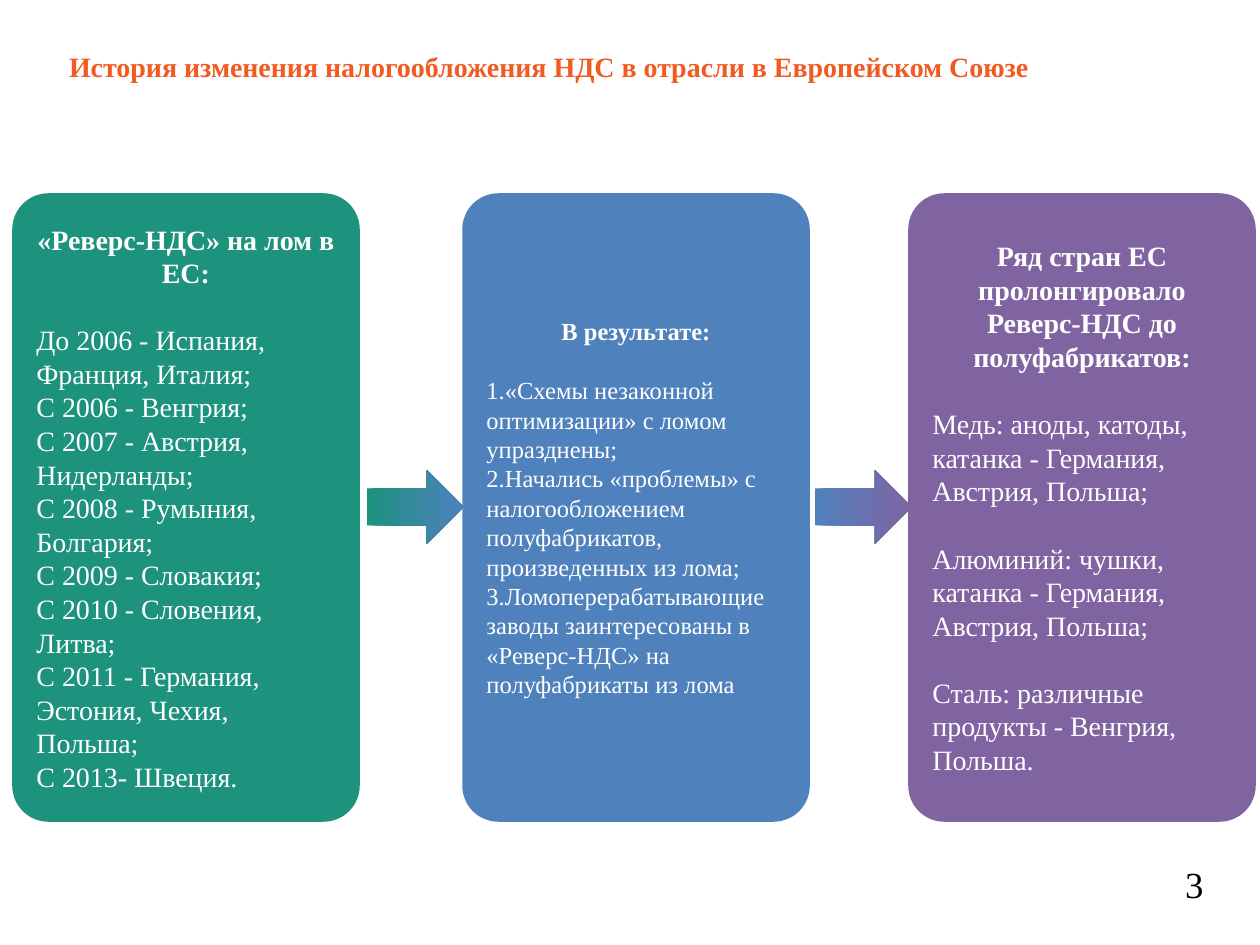
import pptx
import pptx.util
import pptx.dml.color
import pptx.enum.shapes
import pptx.enum.text

RGB = pptx.dml.color.RGBColor
SHAPE = pptx.enum.shapes.MSO_SHAPE
ANCHOR = pptx.enum.text.MSO_ANCHOR
ALIGN = pptx.enum.text.PP_ALIGN
Pt = pptx.util.Pt

PX = 914400 / 126
FONT = "Times New Roman"
ORANGE = RGB(0xF1, 0x5A, 0x21)
GREEN = RGB(0x1D, 0x92, 0x7D)
BLUE = RGB(0x4F, 0x81, 0xBD)
PURPLE = RGB(0x80, 0x64, 0xA2)
WHITE = RGB(0xFF, 0xFF, 0xFF)
BLACK = RGB(0x00, 0x00, 0x00)

CARD_TOP, CARD_W, CARD_H = 195, 344, 625
ARROW_W, ARROW_H = 97, 74
ARROW_TOP = CARD_TOP + (CARD_H - ARROW_H) // 2

CARDS = [
    (14, GREEN, 16, "«Реверс-НДС» на лом в ЕС:", [[
        "До 2006 - Испания, Франция, Италия;",
        "С 2006 - Венгрия;",
        "С 2007 - Австрия, Нидерланды;",
        "С 2008 - Румыния, Болгария;",
        "С 2009 - Словакия;",
        "С 2010 - Словения, Литва;",
        "С 2011 - Германия, Эстония, Чехия, Польша;",
        "С 2013- Швеция.",
    ]]),
    (464, BLUE, 14, "В результате:", [[
        "1.«Схемы незаконной оптимизации» с ломом упразднены;",
        "2.Начались «проблемы» с налогообложением полуфабрикатов, "
        "произведенных из лома;",
        "3.Ломоперерабатывающие заводы заинтересованы в «Реверс-НДС» "
        "на полуфабрикаты из лома",
    ]]),
    (910, PURPLE, 16, "Ряд стран ЕС пролонгировало Реверс-НДС до полуфабрикатов:", [
        ["Медь: аноды, катоды, катанка - Германия, Австрия, Польша;"],
        ["Алюминий: чушки, катанка - Германия, Австрия, Польша;"],
        ["Сталь: различные продукты - Венгрия, Польша."],
    ]),
]
ARROWS = [(367, GREEN, BLUE), (815, BLUE, PURPLE)]


def px(*lengths):
    return [round(n * PX) for n in lengths]


def add_text(tf, text, size=16, color=WHITE, bold=False, align=ALIGN.LEFT, before=0):
    p = tf.paragraphs[0]
    if p.runs:
        p = tf.add_paragraph()
    p.alignment = align
    if before:
        p.space_before = Pt(before)
    r = p.add_run()
    r.text = text
    r.font.name = FONT
    r.font.size = Pt(size)
    r.font.bold = bold
    r.font.color.rgb = color


class SlideBuilder:
    def __init__(self, slide):
        self.s = slide

    def label(self, x, y, w, h, text, wrap=True, anchor=ANCHOR.TOP, **style):
        tf = self.s.shapes.add_textbox(*px(x, y, w, h)).text_frame
        tf.word_wrap = wrap
        tf.vertical_anchor = anchor
        tf.margin_left, tf.margin_right = px(11, 11)
        tf.margin_top, tf.margin_bottom = px(5, 5)
        add_text(tf, text, **style)

    def card(self, x, color, size, heading, groups):
        sp = self.s.shapes.add_shape(
            SHAPE.ROUNDED_RECTANGLE, *px(x, CARD_TOP, CARD_W, CARD_H))
        sp.adjustments[0] = 0.1
        sp.shadow.inherit = False
        sp.fill.solid()
        sp.fill.fore_color.rgb = color
        sp.line.color.rgb = color
        sp.line.width = Pt(2)
        tf = sp.text_frame
        tf.word_wrap = True
        tf.vertical_anchor = ANCHOR.MIDDLE
        add_text(tf, heading, size=size, bold=True, align=ALIGN.CENTER)
        for group in groups:
            for i, text in enumerate(group):
                add_text(tf, text, size=size, before=0 if i else size * 1.2)

    def arrow(self, x, start, end):
        sp = self.s.shapes.add_shape(
            SHAPE.RIGHT_ARROW, *px(x, ARROW_TOP, ARROW_W, ARROW_H))
        sp.shadow.inherit = False
        sp.line.fill.background()
        sp.fill.gradient()
        sp.fill.gradient_angle = 0
        for stop, color, pos in zip(sp.fill.gradient_stops, (start, end), (0, 1)):
            stop.color.rgb = color
            stop.position = pos


def main():
    prs = pptx.Presentation()
    prs.slide_width, prs.slide_height = px(1260, 945)
    b = SlideBuilder(prs.slides.add_slide(prs.slide_layouts[6]))
    b.label(58, 16, 1167, 100,
            "История изменения налогообложения НДС в отрасли в Европейском Союзе",
            wrap=False, anchor=ANCHOR.MIDDLE, color=ORANGE, bold=True)
    b.label(1162, 857, 65, 54, "3", size=21, color=BLACK, align=ALIGN.CENTER)
    for card in CARDS:
        b.card(*card)
    for arrow in ARROWS:
        b.arrow(*arrow)
    prs.save("out.pptx")


if __name__ == "__main__":
    main()
